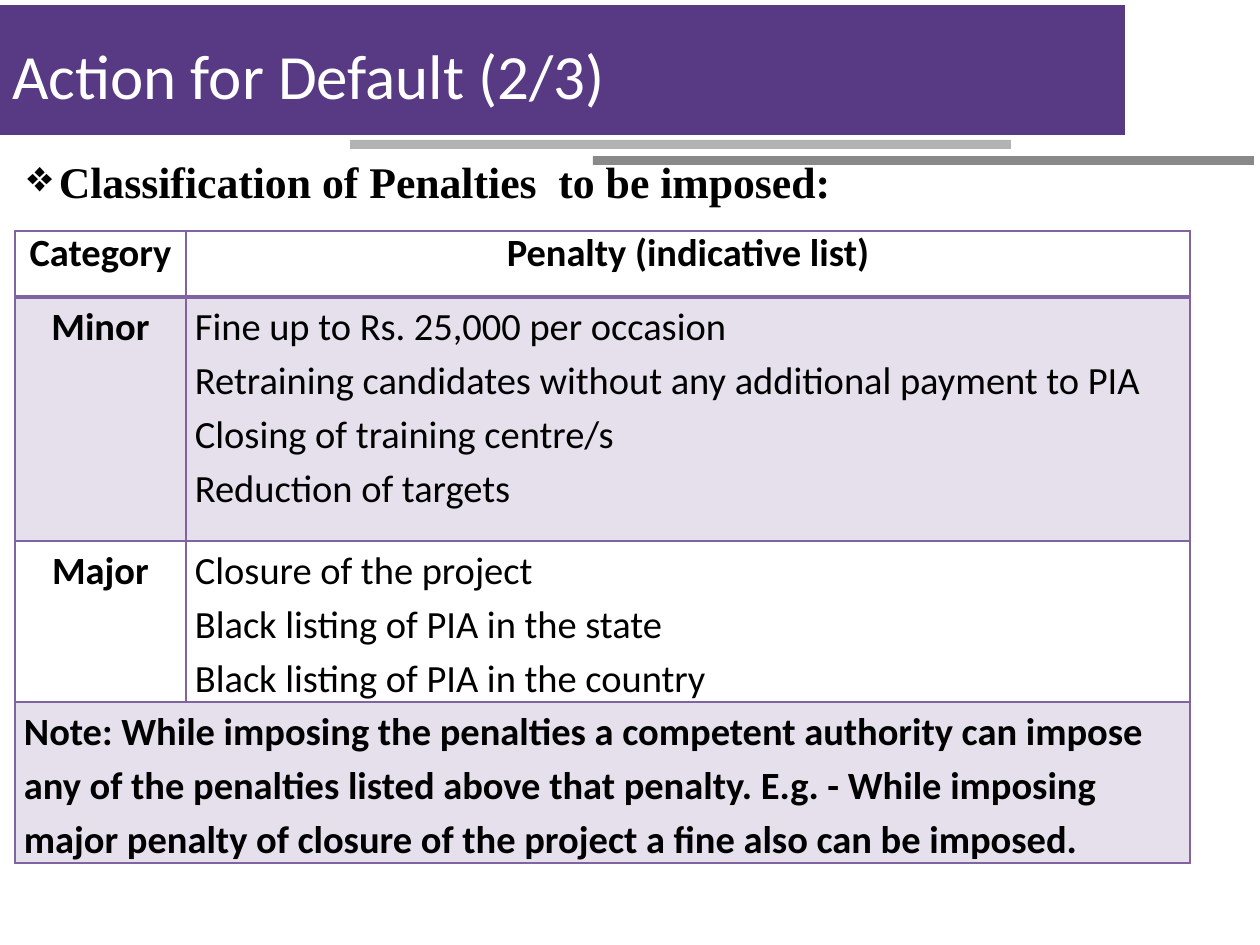
from lxml import etree
from pptx import Presentation, util as u
from pptx.dml.color import RGBColor
from pptx.enum import shapes, text
from pptx.oxml import ns

LEFT, MID, JUST = text.PP_ALIGN.LEFT, text.PP_ALIGN.CENTER, text.PP_ALIGN.JUSTIFY
TOP, CORE = text.MSO_ANCHOR.TOP, text.MSO_ANCHOR.MIDDLE


def px(n):
    return u.Emu(round(n * 914400 / 126))


def hue(code):
    return RGBColor.from_string(code)


def sub(node, tag, **vals):
    return etree.SubElement(node, ns.qn(tag), **vals)


def apply(item, vals):
    for key, val in vals.items():
        setattr(item, key, val)


class Deck:
    """Hold the style and the current slide, and draw each kind of element."""

    edge = "8064A2"
    cell_font = {"name": "Calibri", "size": u.Pt(22), "bold": False}
    pad = {"margin_left": px(9), "margin_right": px(9),
           "margin_top": 0, "margin_bottom": 0}

    def __init__(self):
        self.prs = Presentation()
        apply(self.prs, {"slide_width": px(1260), "slide_height": px(945)})
        self.slide = self.prs.slides.add_slide(self.prs.slide_layouts[6])

    def bar(self, box, color):
        bar = self.slide.shapes.add_shape(
            shapes.MSO_SHAPE.RECTANGLE, *map(px, box))
        bar.shadow.inherit = False
        bar.fill.solid()
        bar.fill.fore_color.rgb = hue(color)
        bar.line.fill.background()

    def lay(self, frame, lines, font, form, color="000000", mark=None):
        for i, line in enumerate(lines):
            para = frame.add_paragraph() if i else frame.paragraphs[0]
            if mark:
                props = para._p.get_or_add_pPr()
                props.set("marL", str(u.Inches(0.25)))
                props.set("indent", str(-u.Inches(0.25)))
                sub(props, "a:buChar", char=mark)
            apply(para, form)
            run = para.add_run()
            run.text = line
            apply(run.font, font)
            run.font.color.rgb = hue(color)

    def label(self, box, line, font, form, color="000000", anchor=TOP, mark=None):
        frame = self.slide.shapes.add_textbox(*map(px, box)).text_frame
        apply(frame, {"word_wrap": True, "vertical_anchor": anchor})
        self.lay(frame, [line], font, form, color, mark)

    def paint(self, cell, tint, head, under):
        props = cell._tc.get_or_add_tcPr()
        for side in "LRTB":
            wide = 2 if (side == "B" and head) or (side == "T" and under) else 1
            line = sub(props, "a:ln" + side, w=str(u.Pt(wide)))
            sub(sub(line, "a:solidFill"), "a:srgbClr", val=self.edge)
        if tint:
            tone = sub(sub(props, "a:solidFill"), "a:srgbClr", val=self.edge)
            sub(tone, "a:alpha", val="20000")
        else:
            cell.fill.background()

    def table(self, spot, cols, highs, rows):
        table = self.slide.shapes.add_table(
            len(rows), len(cols), *map(px, (*spot, sum(cols), sum(highs)))).table
        apply(table, {"first_row": False, "horz_banding": False})
        for col, wide in zip(table.columns, cols):
            col.width = px(wide)
        for r, (lines, high) in enumerate(zip(rows, highs)):
            table.rows[r].height = px(high)
            head, note = r == 0, len(lines) == 1
            if note:
                table.cell(r, 0).merge(table.cell(r, len(cols) - 1))
            for c in range(len(cols)):
                cell = table.cell(r, c)
                self.paint(cell, r % 2 == 1 or note, head, r == 1)
                apply(cell, {**self.pad, "vertical_anchor": CORE if head else TOP})
                if c >= len(lines):
                    continue
                form = {"alignment": LEFT if note else JUST if c and not head else MID,
                        "line_spacing": 1.15}
                if head:
                    form.update(line_spacing=u.Pt(15), space_after=u.Pt(6))
                font = {**self.cell_font, "bold": head or c == 0}
                self.lay(cell.text_frame, lines[c], font, form)


def main():
    deck = Deck()
    deck.bar((0, 5, 1125, 130), "583A84")
    deck.bar((593, 156, 661, 9), "898989")
    deck.bar((350, 140, 661, 9), "B2B3B3")
    deck.label((0, 15, 1135, 129), "Action for Default (2/3)",
               {"name": "Calibri", "size": u.Pt(36)},
               {"line_spacing": 0.9}, "FFFFFF", CORE)
    deck.label((15, 141, 1333, 753), "Classification of Penalties  to be imposed:",
               {"name": "Times New Roman", "size": u.Pt(25), "bold": True},
               {"alignment": JUST, "line_spacing": 1.15}, mark="❖")
    deck.table((15, 231), (171, 1004), (66, 244, 161, 161), [
        [["Category"], ["Penalty (indicative list)"]],
        [["Minor"], ["Fine up to Rs. 25,000 per occasion",
                     "Retraining candidates without any additional payment to PIA",
                     "Closing of training centre/s",
                     "Reduction of targets"]],
        [["Major"], ["Closure of the project",
                     "Black listing of PIA in the state",
                     "Black listing of PIA in the country"]],
        [["Note: While imposing the penalties a competent authority can impose "
          "any of the penalties listed above that penalty. E.g. - While imposing "
          "major penalty of closure of the project a fine also can be imposed."]],
    ])
    deck.prs.save("out.pptx")


if __name__ == "__main__":
    main()
